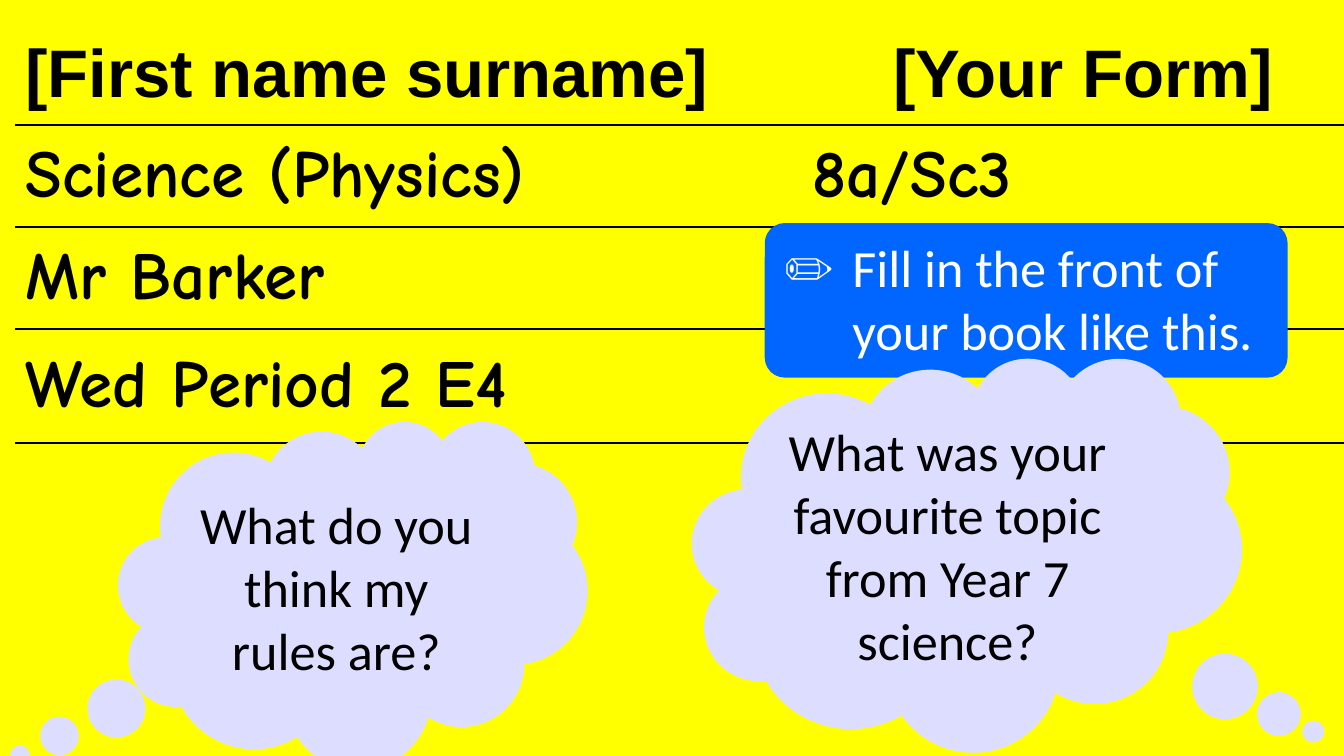
"""Build a yellow exercise-book cover slide with an instruction and two thought clouds."""
from lxml.etree import SubElement
from pptx import Presentation
from pptx.dml.color import RGBColor
from pptx.enum.shapes import MSO_SHAPE
from pptx.enum.text import MSO_ANCHOR, PP_ALIGN
from pptx.oxml import parse_xml
from pptx.oxml.ns import nsdecls, qn
from pptx.util import Pt

COLORS = {"page": "FFFF00", "ink": "000000", "box": "0066FF",
          "cloud": "DDDDFF", "light": "FFFFFF"}
ROWS = [
    ("[First name surname]\t[Your Form]", "Arial", 54.7, 465),
    ("Science (Physics)\t8a/Sc3", "Comic Neue", 54.7, 421.5),
    ("Mr Barker", "Comic Neue", 54.7, None),
    ("Wed Period 2 E4", "Comic Neue", 61.2, None),
    ("", "Comic Neue", 61.2, None),
]
TABLE = (7.9, 12.2, 712.1)
TASK = ("✏\tFill in the front of your book like this.",
        (409.7, 119.5, 280.1, 82.8), (0.13,))
CLOUDS = [
    ("What do you think my rules are?",
     (63.4, 225.4, 251.3, 186.5), (-0.71, 0.46)),
    ("What was your favourite topic from Year 7 science?",
     (370.8, 191.5, 294.5, 211), (0.63, 0.45)),
]
HANG = Pt(36.7)


def paint(fill, name):
    fill.solid()
    fill.fore_color.rgb = RGBColor.from_string(COLORS[name])


def write(para, text, font, size, color, bold=False):
    run = para.add_run()
    run.text = text
    run.font.name, run.font.size, run.font.bold = font, Pt(size), bold
    run.font.color.rgb = RGBColor.from_string(COLORS[color])


def rule(cell, sides):
    props = cell._tc.get_or_add_tcPr()
    for spot, side in enumerate(("lnL", "lnR", "lnT", "lnB")):
        body = "<a:noFill/>"
        if side in sides:
            body = f'<a:solidFill><a:srgbClr val="{COLORS["ink"]}"/></a:solidFill>'
        props.insert(spot, parse_xml(
            f'<a:{side} {nsdecls("a")} w="{Pt(1)}">{body}</a:{side}>'))


def add_rows(slide):
    left, top, width = TABLE
    total = sum(row[2] for row in ROWS)
    table = slide.shapes.add_table(
        len(ROWS), 1, Pt(left), Pt(top), Pt(width), Pt(total)).table
    last = len(ROWS) - 1
    for num, (text, font, height, stop) in enumerate(ROWS):
        table.rows[num].height = Pt(height)
        cell = table.cell(num, 0)
        cell.vertical_anchor = MSO_ANCHOR.MIDDLE
        cell.margin_left = cell.margin_right = Pt(5.8)
        cell.margin_top = cell.margin_bottom = Pt(2.9)
        paint(cell.fill, "page")
        rule(cell, [side for side, on in (("lnT", num > 0), ("lnB", num < last)) if on])
        para = cell.text_frame.paragraphs[0]
        if stop:
            tabs = SubElement(para._p.get_or_add_pPr(), qn("a:tabLst"))
            SubElement(tabs, qn("a:tab"), pos=str(Pt(stop)), algn="l")
        if text:
            write(para, text, font, 36, "ink", True)


def add_note(slide, kind, text, place, adjust, fill, color):
    shape = slide.shapes.add_shape(kind, *map(Pt, place))
    shape.shadow.inherit = False
    for num, value in enumerate(adjust):
        shape.adjustments[num] = value
    paint(shape.fill, fill)
    shape.line.fill.background()
    frame = shape.text_frame
    frame.word_wrap = True
    para = frame.paragraphs[0]
    write(para, text, "Calibri", 28, color)
    return frame, para


def main():
    deck = Presentation()
    deck.slide_width, deck.slide_height = Pt(720), Pt(405)
    slide = deck.slides.add_slide(deck.slide_layouts[6])
    paint(slide.background.fill, "page")
    add_rows(slide)
    frame, para = add_note(slide, MSO_SHAPE.ROUNDED_RECTANGLE, *TASK, "box", "light")
    frame.vertical_anchor = MSO_ANCHOR.TOP
    para.alignment = PP_ALIGN.LEFT
    props = para._p.get_or_add_pPr()
    props.set("marL", str(HANG))
    props.set("indent", str(-HANG))
    for cloud in CLOUDS:
        frame, para = add_note(slide, MSO_SHAPE.CLOUD_CALLOUT, *cloud, "cloud", "ink")
        frame.vertical_anchor = MSO_ANCHOR.MIDDLE
        para.alignment = PP_ALIGN.CENTER
    deck.save("out.pptx")


if __name__ == "__main__":
    main()
